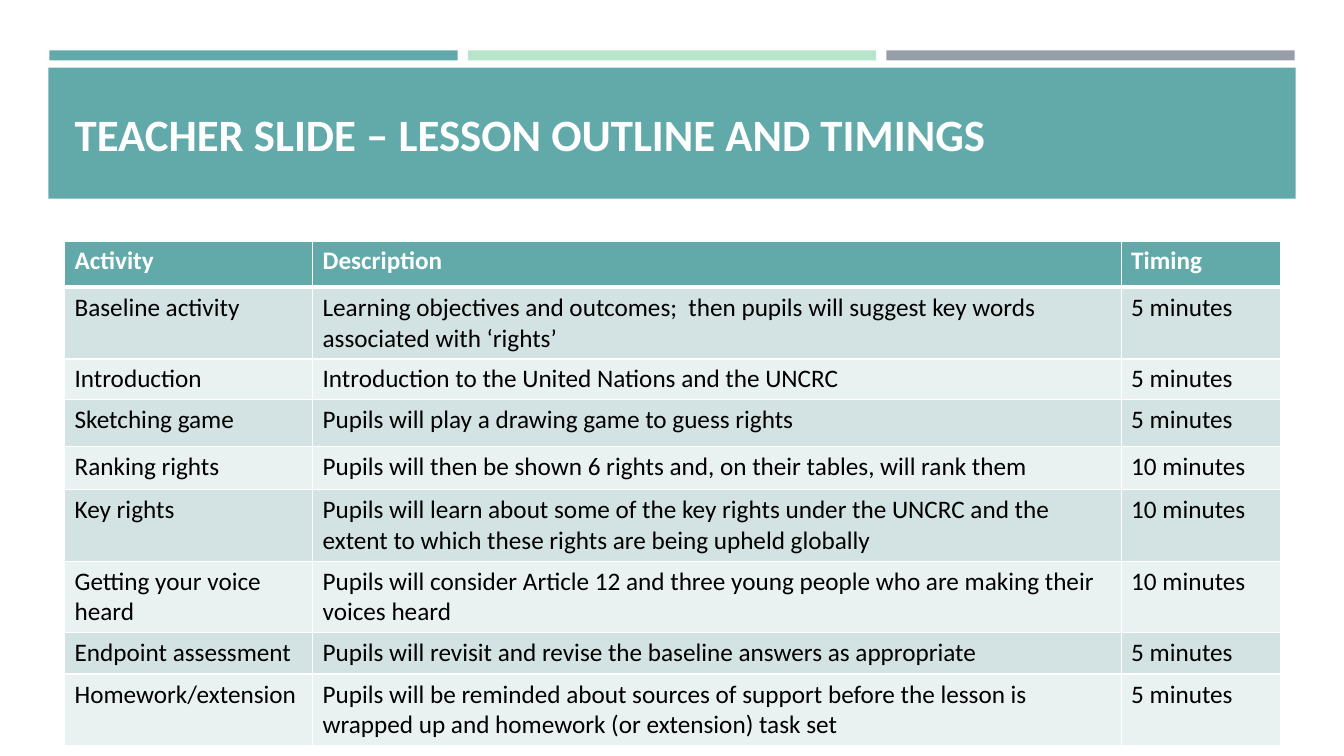
from lxml.etree import SubElement
from pptx import Presentation
from pptx.dml.color import RGBColor
from pptx.enum.shapes import MSO_SHAPE as Preset
from pptx.enum.text import MSO_ANCHOR as Anchor, PP_ALIGN as Align
from pptx.oxml.ns import qn
from pptx.util import Inches, Pt

TITLE = "TEACHER SLIDE – LESSON OUTLINE AND TIMINGS"
LESSON = [
    ("Activity", "Description", "Timing"),
    ("Baseline activity",
     "Learning objectives and outcomes;  then pupils will suggest key words associated with ‘rights’",
     "5 minutes"),
    ("Introduction", "Introduction to the United Nations and the UNCRC", "5 minutes"),
    ("Sketching game", "Pupils will play a drawing game to guess rights", "5 minutes"),
    ("Ranking rights", "Pupils will then be shown 6 rights and, on their tables, will rank them",
     "10 minutes"),
    ("Key rights",
     "Pupils will learn about some of the key rights under the UNCRC and the extent to which "
     "these rights are being upheld globally",
     "10 minutes"),
    ("Getting your voice heard",
     "Pupils will consider Article 12 and three young people who are making their voices heard",
     "10 minutes"),
    ("Endpoint assessment", "Pupils will revisit and revise the baseline answers as appropriate",
     "5 minutes"),
    ("Homework/extension",
     "Pupils will be reminded about sources of support before the lesson is wrapped up and "
     "homework (or extension) task set",
     "5 minutes"),
]
COLUMN_WIDTHS = [2.46, 8.02, 1.58]
ROW_HEIGHTS = [0.46, 0.71, 0.4, 0.46, 0.43, 0.71, 0.71, 0.41, 0.71]
TEAL, WHITE, BLACK = "62A9AA", "FFFFFF", "000000"
STRIPES = [TEAL, "B7E5CB", "969FA7"]
ROW_FILLS = ["EAF1F1", "D3E2E2"]
HEADING = {"name": "Calibri", "size": Pt(32), "bold": True}
HEADER_CELL = {"name": "Calibri", "size": Pt(18), "bold": True}
BODY_CELL = {**HEADER_CELL, "bold": False}

MARGIN, STRIPE_WIDTH, STRIPE_STEP = 0.49, 4.05, 4.15
CONTENT_LEFT, CONTENT_WIDTH = 0.64, sum(COLUMN_WIDTHS)


def paint(fill, color):
    fill.solid()
    fill.fore_color.rgb = RGBColor.from_string(color)


def style(font, values, color):
    for key, value in values.items():
        setattr(font, key, value)
    font.color.rgb = RGBColor.from_string(color)


def place(*lengths):
    return [Inches(length) for length in lengths]


def add_band(slide, box, color):
    band = slide.shapes.add_shape(Preset.RECTANGLE, *place(*box))
    band.shadow.inherit = False
    paint(band.fill, color)
    band.line.fill.background()


def add_borders(cell, top, bottom):
    properties = cell._tc.get_or_add_tcPr()
    for side, points in (("L", 1), ("R", 1), ("T", top), ("B", bottom)):
        border = SubElement(properties, qn(f"a:ln{side}"), w=str(Pt(points)))
        solid = SubElement(border, qn("a:solidFill"))
        SubElement(solid, qn("a:srgbClr"), val=WHITE)


def add_heading(slide):
    heading = slide.shapes.title
    heading.left, heading.top, heading.width, heading.height = place(
        CONTENT_LEFT, 0.77, CONTENT_WIDTH, 1.11)
    heading.text_frame.text = TITLE
    heading.text_frame.vertical_anchor = Anchor.MIDDLE
    paragraph = heading.text_frame.paragraphs[0]
    paragraph.alignment = Align.LEFT
    style(paragraph.runs[0].font, HEADING, WHITE)
    heading.element.getparent().append(heading.element)


def add_outline(slide):
    outline = slide.shapes.add_table(
        len(LESSON), len(COLUMN_WIDTHS),
        *place(CONTENT_LEFT, 2.39, CONTENT_WIDTH, sum(ROW_HEIGHTS))).table
    for column, width in zip(outline.columns, COLUMN_WIDTHS):
        column.width = Inches(width)
    for row, height in zip(outline.rows, ROW_HEIGHTS):
        row.height = Inches(height)
    for r, entries in enumerate(LESSON):
        is_header = r == 0
        for c, entry in enumerate(entries):
            cell = outline.cell(r, c)
            cell.text = entry
            add_borders(cell, 3 if r == 1 else 1, 3 if is_header else 1)
            paint(cell.fill, TEAL if is_header else ROW_FILLS[r % 2])
            style(cell.text_frame.paragraphs[0].runs[0].font,
                  HEADER_CELL if is_header else BODY_CELL,
                  WHITE if is_header else BLACK)


def main():
    deck = Presentation()
    deck.slide_width, deck.slide_height = place(13.33, 7.5)
    slide = deck.slides.add_slide(deck.slide_layouts[5])
    for i, color in enumerate(STRIPES):
        add_band(slide, (MARGIN + i * STRIPE_STEP, 0.5, STRIPE_WIDTH, 0.1), color)
    add_band(slide, (0.48, 0.67, 12.37, 1.3), TEAL)
    add_heading(slide)
    add_outline(slide)
    deck.save("out.pptx")


if __name__ == "__main__":
    main()
